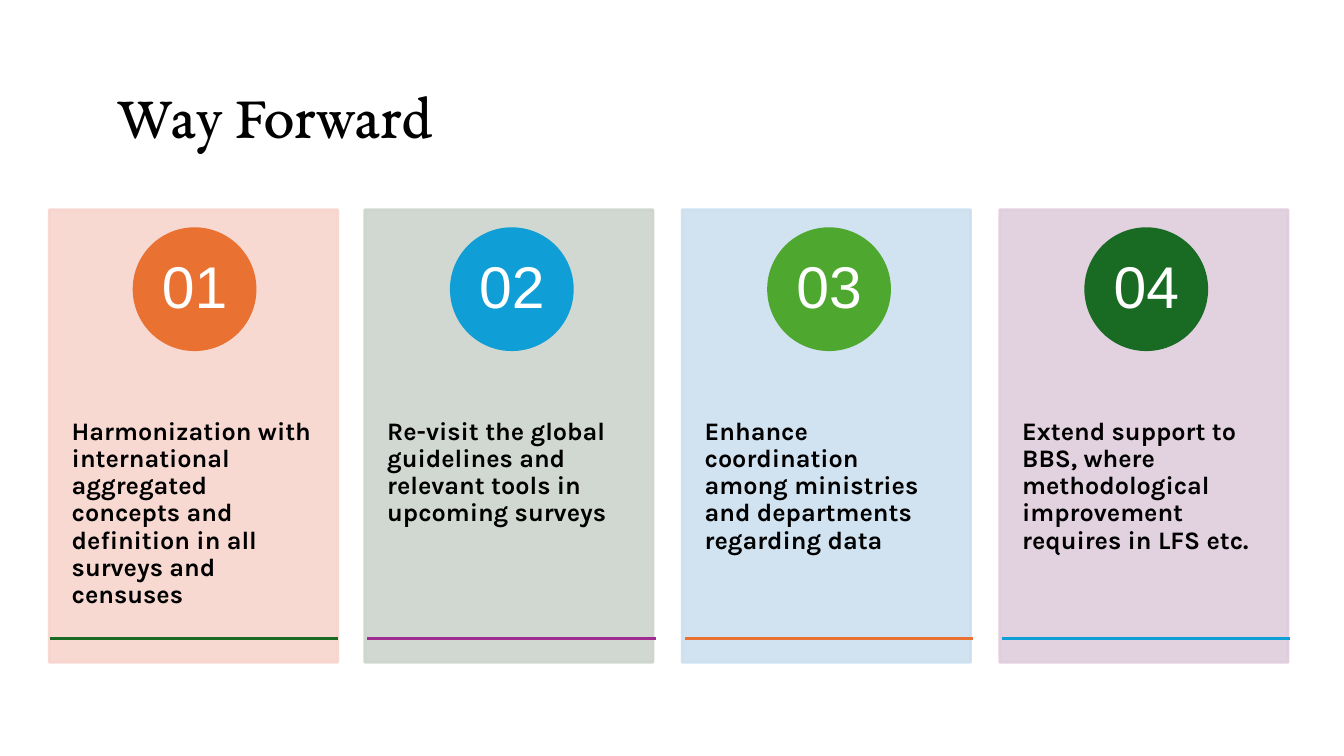
import lxml.etree
import pptx
import pptx.dml.color
import pptx.enum.shapes
import pptx.enum.text
import pptx.oxml.ns
import pptx.util

Pt = pptx.util.Pt
RGBColor = pptx.dml.color.RGBColor
Shape = pptx.enum.shapes.MSO_SHAPE
Align = pptx.enum.text.PP_ALIGN
Anchor = pptx.enum.text.MSO_ANCHOR
qn = pptx.oxml.ns.qn

BLACK = RGBColor(0x00, 0x00, 0x00)
WHITE = RGBColor(0xFF, 0xFF, 0xFF)
ORANGE = RGBColor(0xE9, 0x71, 0x32)
BLUE = RGBColor(0x0F, 0x9E, 0xD5)
GREEN = RGBColor(0x4E, 0xA7, 0x2E)
FOREST = RGBColor(0x19, 0x6B, 0x24)
PURPLE = RGBColor(0xA0, 0x2B, 0x93)
PEACH = RGBColor(0xF7, 0xD5, 0xCE)
SAGE = RGBColor(0xCC, 0xD4, 0xCD)
SKY = RGBColor(0xCC, 0xDF, 0xEF)
MAUVE = RGBColor(0xDF, 0xCD, 0xDC)

CARDS = [
    (35.3, PEACH, ORANGE, FOREST,
     "Harmonization with international aggregated concepts and definition in all surveys and censuses"),
    (260.6, SAGE, BLUE, PURPLE,
     "Re-visit the global guidelines and relevant tools in upcoming surveys"),
    (487.4, SKY, GREEN, ORANGE,
     "Enhance coordination among ministries and departments regarding data"),
    (714.2, MAUVE, FOREST, BLUE,
     "Extend support to BBS, where methodological improvement requires in LFS etc."),
]
WIDTH = 205.9
START = 35.8
PITCH = 226.6
DISC = 86.4


class Deck:
    head = "EB Garamond"
    body = "Karla"
    digit = "Arial"
    stroke = 2

    def __init__(self, slide):
        self.slide = slide

    def shape(self, kind, box, color, alpha=100):
        item = self.slide.shapes.add_shape(kind, *map(Pt, box))
        item.shadow.inherit = False
        item.fill.solid()
        item.fill.fore_color.rgb = color
        item.line.color.rgb = color
        item.line.width = Pt(self.stroke)
        if alpha < 100:
            for tone in item._element.spPr.iter(qn("a:srgbClr")):
                lxml.etree.SubElement(tone, qn("a:alpha"), val=str(alpha * 1000))
        return item

    def text(self, item, words, font, size, color, inset, bold=False,
             align=Align.LEFT, anchor=Anchor.TOP, space=1.0, wrap=True):
        frame = item.text_frame
        frame.word_wrap = wrap
        frame.vertical_anchor = anchor
        frame.margin_left, frame.margin_top, frame.margin_right, frame.margin_bottom = map(Pt, inset)
        para = frame.paragraphs[0]
        para.alignment = align
        para.line_spacing = space
        run = para.add_run()
        run.text = words
        run.font.name = font
        run.font.size = Pt(size)
        run.font.bold = bold
        run.font.color.rgb = color

    def label(self, box, *args, **style):
        item = self.slide.shapes.add_textbox(*map(Pt, box))
        self.text(item, *args, **style)

    def rule(self, left, top, width, color):
        kind = pptx.enum.shapes.MSO_CONNECTOR.STRAIGHT
        item = self.slide.shapes.add_connector(
            kind, Pt(left), Pt(top), Pt(left + width), Pt(top))
        item.line.color.rgb = color
        item.line.width = Pt(self.stroke)
        lxml.etree.SubElement(item._element.spPr, qn("a:effectLst"))

    def card(self, index, left, tint, color, accent, words):
        base = START + PITCH * index
        self.shape(Shape.RECTANGLE, (left, 149.8, WIDTH, 323.3), tint, alpha=90)
        self.label((left, 272.9, WIDTH, 193.7), words, self.body, 18, BLACK,
                   (16, 26, 16, 26), bold=True, space=0.9)
        disc = self.shape(Shape.OVAL, (base + 60, 163.4, DISC, DISC), color)
        self.text(disc, f"{index + 1:02}", self.digit, 42, WHITE, (6.5, 0.7, 6.5, 0.7),
                  align=Align.CENTER, anchor=Anchor.MIDDLE, space=0.9, wrap=False)
        self.rule(base, 455.8, WIDTH, accent)


def main():
    show = pptx.Presentation()
    show.slide_width = Pt(960)
    show.slide_height = Pt(540)
    deck = Deck(show.slides.add_slide(show.slide_layouts[6]))
    for index, card in enumerate(CARDS):
        deck.card(index, *card)
    deck.label((66.2, 28.8, 828, 104.4), "Way Forward", deck.head, 44, BLACK,
               (17.5, 3.6, 7.2, 3.6), anchor=Anchor.MIDDLE)
    show.save("out.pptx")


if __name__ == "__main__":
    main()
